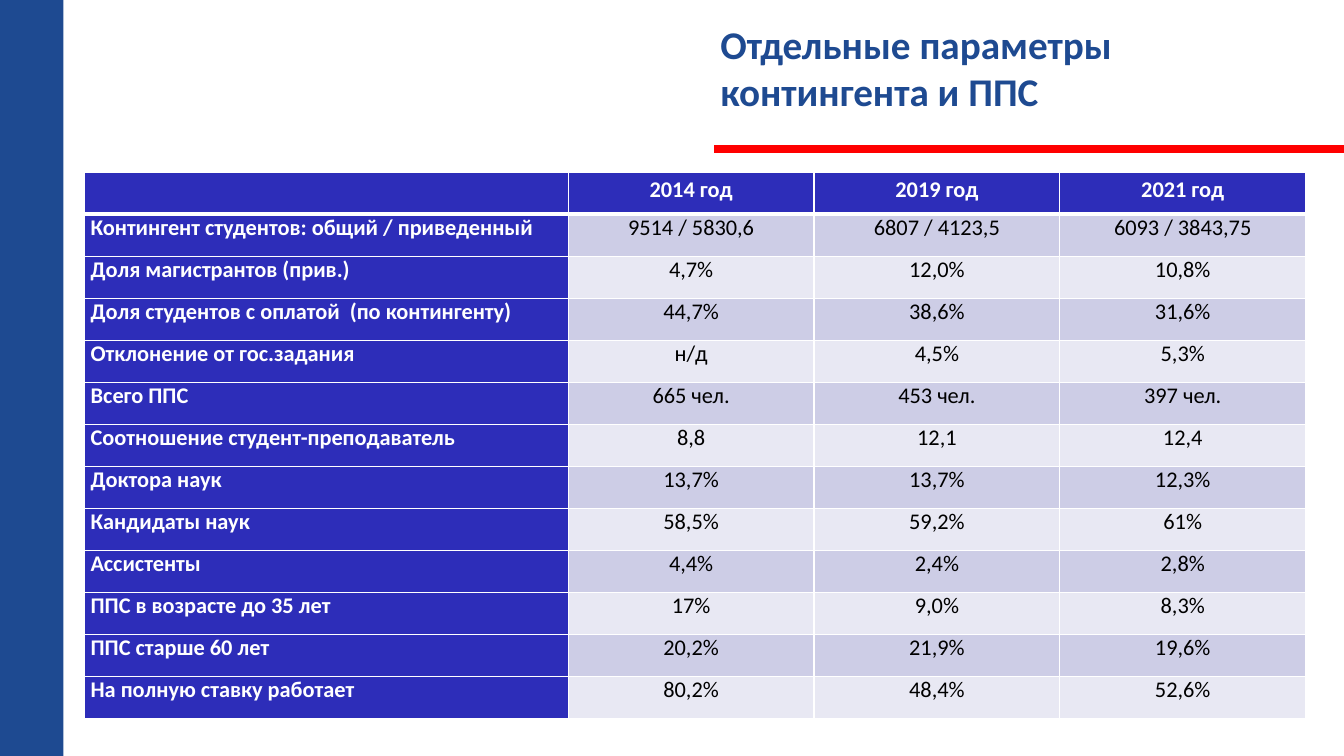
"""Build a slide comparing student and teaching staff figures across three years."""
import dataclasses

import lxml.etree
import pptx
import pptx.dml.color
import pptx.enum.shapes
import pptx.enum.text
import pptx.oxml.ns
import pptx.util

Inches = pptx.util.Inches
FONT = "Calibri"
COLOURS = {
    "blue": "1E4A91",
    "red": "FF0000",
    "indigo": "2D2DB9",
    "dark_band": "CDCDE6",
    "light_band": "E8E8F3",
    "white": "FFFFFF",
    "black": "000000",
}
YEARS = ("2014 год", "2019 год", "2021 год")
COLUMN_WIDTHS = (4.8, 2.44, 2.44, 2.44)
TABLE_HEIGHT = 5.42


@dataclasses.dataclass(frozen=True)
class Indicator:
    """One table row: a label and its value for each year."""

    label: str
    values: tuple[str, str, str]


@dataclasses.dataclass(frozen=True)
class CellStyle:
    """The look of one table cell."""

    fill: str
    text: str
    bold: bool
    centred: bool
    spacing: float = 1.0
    top: float = 1
    bottom: float = 1


INDICATORS = (
    Indicator("Контингент студентов: общий / приведенный",
              ("9514 / 5830,6", "6807 / 4123,5", "6093 / 3843,75")),
    Indicator("Доля магистрантов (прив.)", ("4,7%", "12,0%", "10,8%")),
    Indicator("Доля студентов с оплатой  (по контингенту)", ("44,7%", "38,6%", "31,6%")),
    Indicator("Отклонение от гос.задания", ("н/д", "4,5%", "5,3%")),
    Indicator("Всего ППС", ("665 чел.", "453 чел.", "397 чел.")),
    Indicator("Соотношение студент-преподаватель", ("8,8", "12,1", "12,4")),
    Indicator("Доктора наук", ("13,7%", "13,7%", "12,3%")),
    Indicator("Кандидаты наук", ("58,5%", "59,2%", "61%")),
    Indicator("Ассистенты", ("4,4%", "2,4%", "2,8%")),
    Indicator("ППС в возрасте до 35 лет", ("17%", "9,0%", "8,3%")),
    Indicator("ППС старше 60 лет", ("20,2%", "21,9%", "19,6%")),
    Indicator("На полную ставку работает", ("80,2%", "48,4%", "52,6%")),
)


def colour(name: str) -> pptx.dml.color.RGBColor:
    """Return a palette colour."""
    return pptx.dml.color.RGBColor.from_string(COLOURS[name])


def format_text(frame, size: float, name: str, bold: bool) -> None:
    """Format every run of a text frame."""
    for para in frame.paragraphs:
        for span in para.runs:
            span.font.name = FONT
            span.font.size = pptx.util.Pt(size)
            span.font.bold = bold
            span.font.color.rgb = colour(name)


def add_title(page, text: str) -> None:
    """Place the heading in the title placeholder."""
    box = page.shapes.title
    box.left, box.top = Inches(7.05), Inches(0.15)
    box.width, box.height = Inches(6.06), Inches(1.05)
    frame = box.text_frame
    frame.text = text
    frame.word_wrap = True
    frame.auto_size = pptx.enum.text.MSO_AUTO_SIZE.NONE
    frame.vertical_anchor = pptx.enum.text.MSO_ANCHOR.TOP
    frame.paragraphs[0].alignment = pptx.enum.text.PP_ALIGN.LEFT
    format_text(frame, 28, "blue", True)


def add_rule(page) -> None:
    """Draw the red line under the heading."""
    rule = page.shapes.add_connector(
        pptx.enum.shapes.MSO_CONNECTOR.STRAIGHT,
        Inches(7.09), Inches(1.48), Inches(13.34), Inches(1.48))
    rule.line.color.rgb = colour("red")
    rule.line.width = pptx.util.Pt(6)
    lxml.etree.SubElement(rule._element.spPr, pptx.oxml.ns.qn("a:effectLst"))


def add_side_band(page) -> None:
    """Draw the blue band along the left edge."""
    band = page.shapes.add_shape(
        pptx.enum.shapes.MSO_SHAPE.RECTANGLE, 0, 0, Inches(0.63), Inches(7.52))
    band.shadow.inherit = False
    band.fill.solid()
    band.fill.fore_color.rgb = colour("blue")
    band.line.fill.background()


def add_borders(cell, style: CellStyle) -> None:
    """Give a cell white borders on all sides."""
    properties = cell._tc.get_or_add_tcPr()
    widths = {"lnL": 1, "lnR": 1, "lnT": style.top, "lnB": style.bottom}
    for side, width in widths.items():
        border = lxml.etree.SubElement(
            properties, pptx.oxml.ns.qn(f"a:{side}"), w=str(pptx.util.Pt(width)))
        fill = lxml.etree.SubElement(border, pptx.oxml.ns.qn("a:solidFill"))
        lxml.etree.SubElement(fill, pptx.oxml.ns.qn("a:srgbClr"), val=COLOURS["white"])


def fill_cell(cell, text: str, style: CellStyle) -> None:
    """Write and format one table cell."""
    add_borders(cell, style)
    cell.fill.solid()
    cell.fill.fore_color.rgb = colour(style.fill)
    cell.margin_left = cell.margin_right = Inches(0.06)
    cell.margin_top = cell.margin_bottom = 0
    cell.vertical_anchor = pptx.enum.text.MSO_ANCHOR.TOP
    cell.text_frame.text = text
    para = cell.text_frame.paragraphs[0]
    align = pptx.enum.text.PP_ALIGN
    para.alignment = align.CENTER if style.centred else align.LEFT
    para.line_spacing = style.spacing
    format_text(cell.text_frame, 16, style.text, style.bold)


def cell_style(row: int, column: int) -> CellStyle:
    """Choose the look of a cell from its place in the table."""
    if row == 0:
        return CellStyle("indigo", "white", True, True, spacing=1.15, bottom=3)
    top = 3 if row == 1 else 1
    if column == 0:
        return CellStyle("indigo", "white", True, False, top=top)
    band = "dark_band" if row % 2 else "light_band"
    return CellStyle(band, "black", False, True, top=top)


def add_indicator_table(page) -> None:
    """Add the table of indicators by year."""
    rows = [("", *YEARS), *((item.label, *item.values) for item in INDICATORS)]
    table = page.shapes.add_table(
        len(rows), len(COLUMN_WIDTHS), Inches(0.84), Inches(1.71),
        Inches(sum(COLUMN_WIDTHS)), Inches(TABLE_HEIGHT)).table
    table.first_col = True
    for column, width in zip(table.columns, COLUMN_WIDTHS):
        column.width = Inches(width)
    for row, texts in enumerate(rows):
        table.rows[row].height = Inches(TABLE_HEIGHT / len(rows))
        for column, text in enumerate(texts):
            fill_cell(table.cell(row, column), text, cell_style(row, column))


def main() -> None:
    """Build and save the deck."""
    deck = pptx.Presentation()
    deck.slide_width, deck.slide_height = Inches(13.34), Inches(7.5)
    page = deck.slides.add_slide(deck.slide_layouts.get_by_name("Title Only"))
    add_rule(page)
    add_title(page, "Отдельные параметры контингента и ППС")
    add_side_band(page)
    add_indicator_table(page)
    deck.save("out.pptx")


if __name__ == "__main__":
    main()
